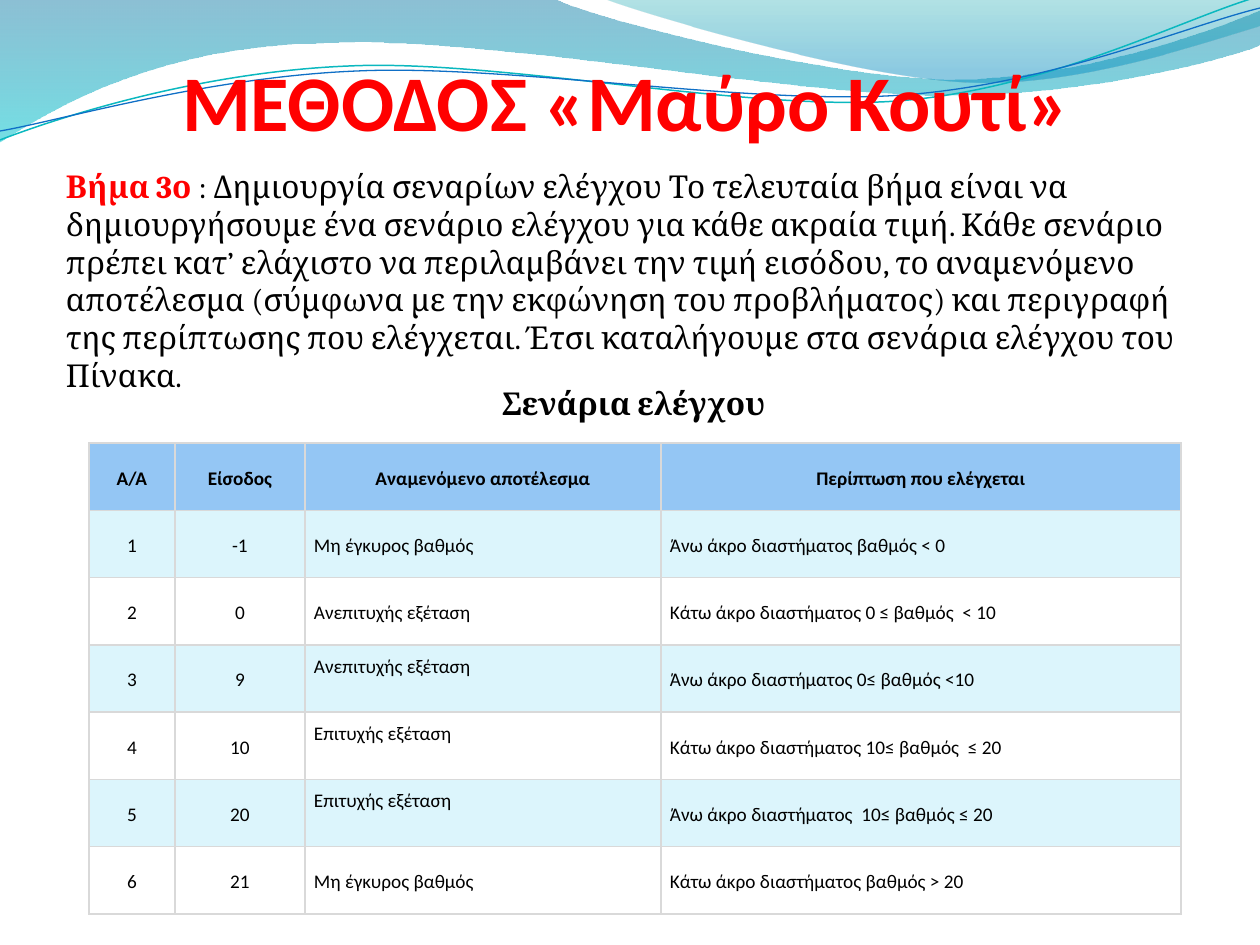
import math

from lxml import etree
from pptx import Presentation
from pptx import util as u
from pptx.dml.color import RGBColor
from pptx.enum import text
from pptx.oxml import parse_xml
from pptx.oxml.ns import nsdecls, qn

PX = 914400 / 126
CENTER, LEFT = text.PP_ALIGN.CENTER, text.PP_ALIGN.LEFT
MIDDLE, BOTTOM = text.MSO_ANCHOR.MIDDLE, text.MSO_ANCHOR.BOTTOM

TITLE = "ΜΕΘΟΔΟΣ «Μαύρο Κουτί»"
STEP = "Βήμα 3ο "
BODY = (
    ": Δημιουργία σεναρίων ελέγχου Το τελευταία βήμα είναι να δημιουργήσουμε "
    "ένα σενάριο ελέγχου για κάθε ακραία τιμή. Κάθε σενάριο πρέπει κατ’ ελάχιστο "
    "να περιλαμβάνει την τιμή εισόδου, το αναμενόμενο αποτέλεσμα (σύμφωνα με την "
    "εκφώνηση του προβλήματος) και περιγραφή της περίπτωσης που ελέγχεται. Έτσι "
    "καταλήγουμε στα σενάρια ελέγχου του Πίνακα."
)
CAPTION = "Σενάρια ελέγχου"
ROWS = [
    ("Α/Α", "Είσοδος", "Αναμενόμενο αποτέλεσμα", "Περίπτωση που ελέγχεται"),
    ("1", "-1", "Μη έγκυρος βαθμός", "Άνω άκρο διαστήματος βαθμός < 0"),
    ("2", "0", "Ανεπιτυχής εξέταση", "Κάτω άκρο διαστήματος 0 ≤ βαθμός  < 10"),
    ("3", "9", "Ανεπιτυχής εξέταση", "Άνω άκρο διαστήματος 0≤ βαθμός <10"),
    ("4", "10", "Επιτυχής εξέταση", "Κάτω άκρο διαστήματος 10≤ βαθμός  ≤ 20"),
    ("5", "20", "Επιτυχής εξέταση", "Άνω άκρο διαστήματος  10≤ βαθμός ≤ 20"),
    ("6", "21", "Μη έγκυρος βαθμός", "Κάτω άκρο διαστήματος βαθμός > 20"),
]
COLUMNS = [86, 130, 356, 520]
TABLE_BOX = (89, 443, sum(COLUMNS), 471)
RAISED_ROWS, RAISED_COLUMN = (3, 4, 5), 2

WAVES = [
    ((-1, -1, 1262, 143),
     [[(0, 0)], [(554, -1)], [(600, 21), (837, 79), (955, 79)],
      [(1075, 79), (1207, 33), (1260, 11)], [(1261, 45)],
      [(1239, 55), (1096, 96), (940, 95)], [(784, 95), (481, 35), (324, 43)],
      [(163, 45), (58, 105), (-1, 142)], [(0, 0)]],
     [(0, "0074A1", 45), (100, "00C6CF", 55)]),
    ((604, -1, 656, 88),
     [[(604, -1)], [(641, 14), (859, 78), (969, 82)],
      [(1079, 87), (1211, 40), (1260, 26)], [(1260, 0)], [(604, -1)]],
     [(0, "00A1A9", 30), (80, "008BBF", 45)]),
]
TILT = -2.7
STRANDS = [
    ((-2, 28, 1262, 89),
     [[(0, 140)], [(60, 117), (199, 72), (349, 66)],
      [(498, 59), (747, 112), (898, 101)], [(1050, 89), (1182, 19), (1257, -3)]],
     "0AB8BF", 0.85),
    ((-2, 38, 1263, 73),
     [[(0, 131)], [(59, 121), (207, 77), (357, 71)],
      [(508, 64), (752, 106), (903, 95)], [(1053, 84), (1186, 26), (1260, 8)]],
     "0F6FC6", 0.75),
]


def px(n):
    return u.Emu(round(n * PX))


def rgb(value):
    return RGBColor.from_string(value)


def turn(point, box, degrees):
    left, top, width, height = box
    cx, cy = left + width / 2, top + height / 2
    dx, dy = point[0] - cx, point[1] - cy
    cos, sin = math.cos(math.radians(degrees)), math.sin(math.radians(degrees))
    return cx + dx * cos - dy * sin, cy + dx * sin + dy * cos


def add_curve(parent, box, segments, close, tilt=0):
    segments = [[turn(pt, box, -tilt) for pt in seg] for seg in segments]
    ends = [tuple(map(px, seg[-1])) for seg in segments]
    builder = parent.build_freeform(*ends[0], scale=1.0)
    builder.add_line_segments(ends[1:], close=close)
    sp = builder.convert_to_shape()
    sp.shadow.inherit = False
    sp.left, sp.top, sp.width, sp.height = map(px, box)
    sp.rotation = tilt
    outline = sp.element.spPr.find(".//" + qn("a:path"))
    outline.set("w", str(sp.width))
    outline.set("h", str(sp.height))
    for node, seg in zip(list(outline), segments):
        if len(seg) == 3:
            curve = etree.Element(qn("a:cubicBezTo"))
            outline.replace(node, curve)
            node = curve
        for pt in node.findall(qn("a:pt")):
            node.remove(pt)
        for x, y in seg:
            etree.SubElement(node, qn("a:pt"), x=str(px(x - box[0])),
                             y=str(px(y - box[1])))
    return sp


def set_gradient(sp, stops):
    sp.fill.gradient()
    old = sp.element.spPr.find(qn("a:gradFill"))
    gs = "".join(
        f'<a:gs pos="{pos * 1000}"><a:srgbClr val="{color}">'
        f'<a:alpha val="{alpha * 1000}"/></a:srgbClr></a:gs>'
        for pos, color, alpha in stops
    )
    new = parse_xml(
        f'<a:gradFill {nsdecls("a")}><a:gsLst>{gs}</a:gsLst>'
        '<a:lin ang="5400000" scaled="0"/></a:gradFill>'
    )
    old.getparent().replace(old, new)


def style(font, size, name, color, bold):
    font.size, font.name, font.bold = u.Pt(size), name, bold
    font.color.rgb = rgb(color)


def add_text(s, box, anchor, margins):
    tf = s.shapes.add_textbox(*map(px, box)).text_frame
    tf.word_wrap = True
    tf.vertical_anchor = anchor
    tf.margin_left, tf.margin_top, tf.margin_right, tf.margin_bottom = map(px, margins)
    return tf.paragraphs[0]


def set_borders(cell, color, width):
    tc_pr = cell._tc.get_or_add_tcPr()
    for i, side in enumerate(("lnL", "lnR", "lnT", "lnB")):
        ln = etree.Element(qn(f"a:{side}"), w=str(u.Pt(width)))
        fill = etree.SubElement(ln, qn("a:solidFill"))
        etree.SubElement(fill, qn("a:srgbClr"), val=color)
        tc_pr.insert(i, ln)


def add_scenarios(s):
    table = s.shapes.add_table(len(ROWS), len(COLUMNS), *map(px, TABLE_BOX)).table
    for column, width in zip(table.columns, COLUMNS):
        column.width = px(width)
    for r, values in enumerate(ROWS):
        table.rows[r].height = px(TABLE_BOX[3] / len(ROWS))
        color = "94C6F4" if r == 0 else "DCF5FC" if r % 2 else "FFFFFF"
        for c, value in enumerate(values):
            cell = table.cell(r, c)
            raised = r in RAISED_ROWS and c == RAISED_COLUMN
            cell.margin_left = cell.margin_right = px(9)
            cell.margin_top, cell.margin_bottom = 0, px(27 if raised else 0)
            cell.vertical_anchor = MIDDLE
            cell.fill.solid()
            cell.fill.fore_color.rgb = rgb(color)
            set_borders(cell, "D9D9D9", 1)
            p = cell.text_frame.paragraphs[0]
            p.text = value
            p.alignment = CENTER if r == 0 or c < 2 else LEFT
            p.line_spacing = 1.15
            style(p.font, 11, "Calibri", "000000", r == 0)


def main():
    prs = Presentation()
    prs.slide_width, prs.slide_height = px(1260), px(945)
    s = prs.slides.add_slide(prs.slide_layouts[6])

    for box, segments, stops in WAVES:
        sp = add_curve(s.shapes, box, segments, True)
        set_gradient(sp, stops)
        sp.line.fill.background()
    strands = s.shapes.add_group_shape()
    for box, segments, color, width in STRANDS:
        sp = add_curve(strands.shapes, box, segments, False, TILT)
        sp.fill.background()
        sp.line.color.rgb = rgb(color)
        sp.line.width = u.Pt(width)

    p = add_text(s, (59, 49, 1134, 98), BOTTOM, (0, 6, 0, 0))
    p.text = TITLE
    p.alignment = CENTER
    style(p.font, 45, "Calibri", "FF0000", True)

    p = add_text(s, (60, 187, 1148, 187), MIDDLE, (6, 0, 6, 0))
    for value, color, bold in ((STEP, "FF0000", True), (BODY, "000000", False)):
        r = p.add_run()
        r.text = value
        style(r.font, 18, "Cambria", color, bold)

    add_scenarios(s)

    p = add_text(s, (403, 374, 433, 58), MIDDLE, (99, 0, 6, 0))
    p.text = CAPTION
    style(p.font, 18, "Cambria", "000000", True)

    prs.save("out.pptx")


if __name__ == "__main__":
    main()
